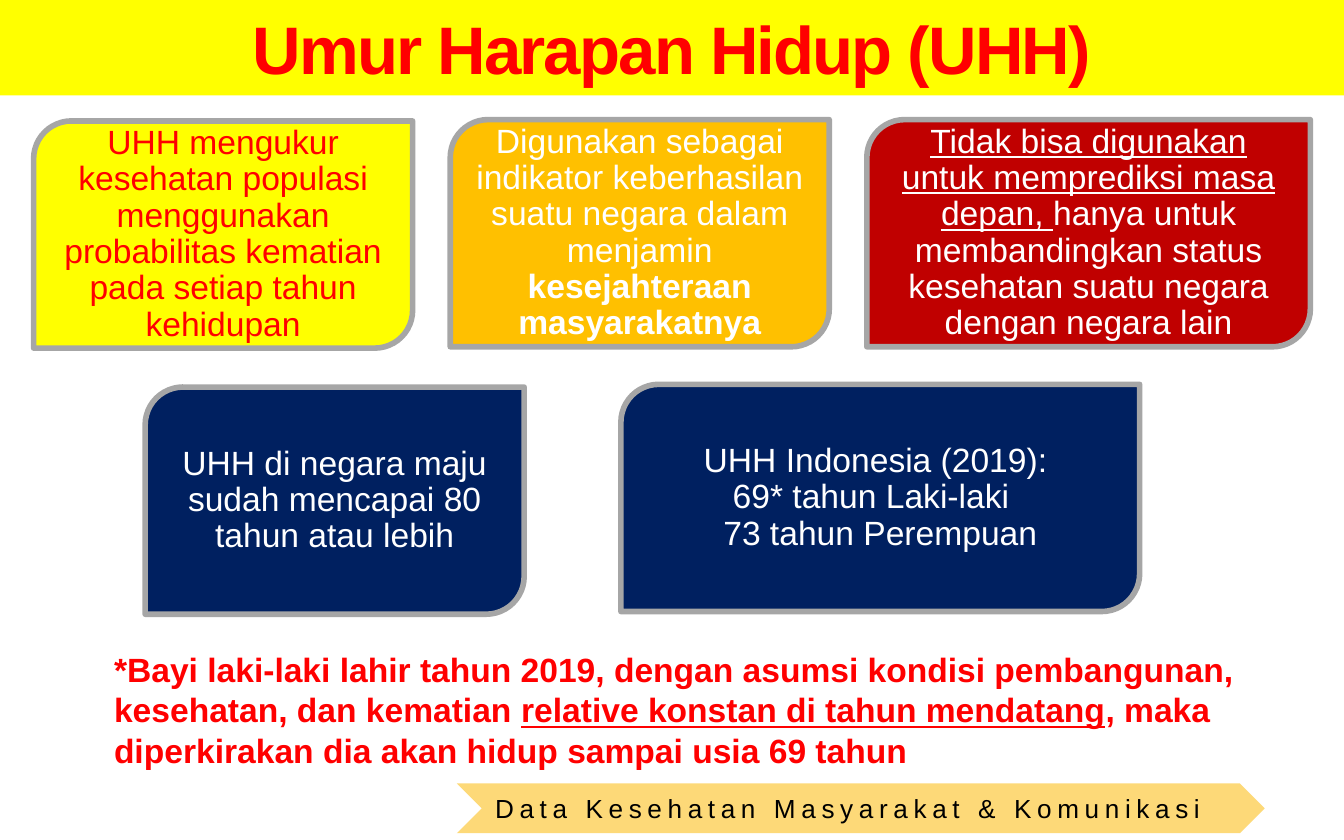
from pptx import Presentation
from pptx.dml.color import RGBColor
from pptx.enum import shapes, text
from pptx.util import Inches, Pt


def rgb(value):
    return RGBColor.from_string(value)


def add_run(paragraph, words, size, color, bold=False, underline=False, spacing=None):
    run = paragraph.add_run()
    run.text = words
    run.font.name = "Arial"
    run.font.size = Pt(size)
    run.font.bold = bold
    run.font.underline = underline
    run.font.color.rgb = rgb(color)
    if spacing is not None:
        run.font._element.set("spc", str(spacing))


prs = Presentation()
prs.slide_width = Inches(10)
prs.slide_height = Inches(6.25)
slide = prs.slides.add_slide(prs.slide_layouts[5])

# Title band
title = slide.shapes.title
title.left, title.top = Inches(0), Inches(0)
title.width, title.height = Inches(10), Inches(0.71)
title.fill.solid()
title.fill.fore_color.rgb = rgb("FFFF00")
title.text_frame.vertical_anchor = text.MSO_ANCHOR.MIDDLE
title.text_frame.auto_size = text.MSO_AUTO_SIZE.NONE
heading = title.text_frame.paragraphs[0]
heading.alignment = text.PP_ALIGN.CENTER
add_run(heading, "Umur Harapan Hidup (UHH)", 36, "FF0000", bold=True, spacing=-100)

# Footer chevron
footer = slide.shapes.add_shape(
    shapes.MSO_SHAPE.CHEVRON, Inches(3.4), Inches(5.83), Inches(6.01), Inches(0.37))
footer.shadow.inherit = False
footer.fill.solid()
footer.fill.fore_color.rgb = rgb("FDD978")
footer.line.fill.background()
footer.text_frame.vertical_anchor = text.MSO_ANCHOR.MIDDLE
course = footer.text_frame.paragraphs[0]
course.alignment = text.PP_ALIGN.JUSTIFY
add_run(course, "Data Kesehatan Masyarakat & Komunikasi", 14, "000000", spacing=300)

# Fact cards: left, top, width, fill, text colour, lines of (words, bold, underline)
cards = [
    (0.25, 0.9, 2.82, "FFFF00", "FF0000",
     [[("UHH mengukur kesehatan populasi menggunakan probabilitas kematian "
        "pada setiap tahun kehidupan", False, False)]]),
    (3.35, 0.89, 2.82, "FFC000", "FFFFFF",
     [[("Digunakan sebagai indikator keberhasilan suatu negara dalam menjamin ", False, False),
       ("kesejahteraan masyarakatnya", True, False)]]),
    (6.45, 0.89, 3.3, "C00000", "FFFFFF",
     [[("Tidak bisa digunakan untuk memprediksi masa depan, ", False, True),
       ("hanya untuk membandingkan status kesehatan suatu negara dengan negara lain",
        False, False)]]),
    (1.08, 2.88, 2.82, "002060", "FFFFFF",
     [[("UHH di negara maju sudah mencapai 80 tahun atau lebih", False, False)]]),
    (4.62, 2.86, 3.86, "002060", "FFFFFF",
     [[("UHH Indonesia (2019): ", False, False)],
      [("69* tahun Laki-laki  ", False, False)],
      [("73 tahun Perempuan", False, False)]]),
]
for left, top, width, fill, color, lines in cards:
    card = slide.shapes.add_shape(
        shapes.MSO_SHAPE.ROUND_2_DIAG_RECTANGLE,
        Inches(left), Inches(top), Inches(width), Inches(1.69))
    card.shadow.inherit = False
    card.fill.solid()
    card.fill.fore_color.rgb = rgb(fill)
    card.line.color.rgb = rgb("A6A6A6")
    card.line.width = Pt(3)
    frame = card.text_frame
    frame.word_wrap = True
    frame.vertical_anchor = text.MSO_ANCHOR.MIDDLE
    frame.margin_left = frame.margin_right = Inches(0.07)
    frame.margin_top = frame.margin_bottom = Inches(0.07)
    fact = frame.paragraphs[0]
    fact.alignment = text.PP_ALIGN.CENTER
    fact.line_spacing = 0.9
    for number, line in enumerate(lines):
        if number:
            fact.add_line_break()
        for words, bold, underline in line:
            add_run(fact, words, 18, color, bold, underline)

# Footnote
footnote = slide.shapes.add_textbox(Inches(0.75), Inches(4.78), Inches(8.75), Inches(1.01))
footnote.text_frame.word_wrap = True
footnote.text_frame.auto_size = text.MSO_AUTO_SIZE.SHAPE_TO_FIT_TEXT
note = footnote.text_frame.paragraphs[0]
for words, underline in [
    ("*Bayi laki-laki lahir tahun 2019, dengan asumsi kondisi pembangunan, "
     "kesehatan, dan kematian ", False),
    ("relative konstan di tahun mendatang", True),
    (", maka diperkirakan dia akan hidup sampai usia 69 tahun", False),
]:
    add_run(note, words, 18, "FF0000", bold=True, underline=underline)

prs.save("out.pptx")
